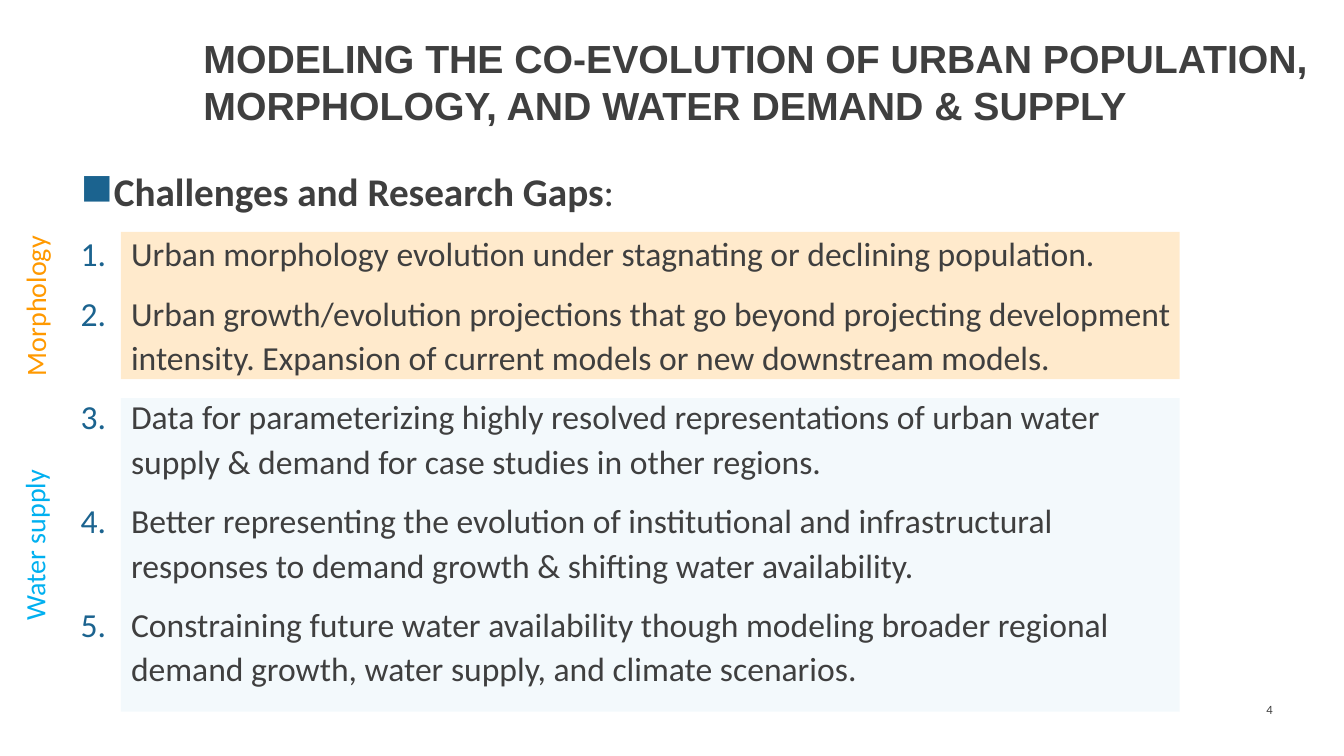
"""Build the slide on challenges in modeling urban population, morphology and water."""
from dataclasses import dataclass

import lxml.etree
import pptx
import pptx.dml.color
import pptx.enum.shapes
import pptx.enum.text
import pptx.oxml.ns
import pptx.util

SLIDE_WIDTH = pptx.util.Inches(13.33)
SLIDE_HEIGHT = pptx.util.Inches(7.5)
COLORS = {
    "text": "3F3F3F",
    "marker": "1B638F",
    "morphology": "FF9900",
    "water band": "C4E2F4",
    "water label": "00B0F0",
}
GAPS = (
    "Urban morphology evolution under stagnating or declining population.",
    "Urban growth/evolution projections that go beyond projecting development intensity. "
    "Expansion of current models or new downstream models.",
    "Data for parameterizing highly resolved representations of urban water supply & demand "
    "for case studies in other regions.",
    "Better representing the evolution of institutional and infrastructural responses to "
    "demand growth & shifting water availability.",
    "Constraining future water availability though modeling broader regional demand growth, "
    "water supply, and climate scenarios.",
)


@dataclass(frozen=True)
class Area:
    """Place on the slide, in percent of its width and height."""

    left: float
    top: float
    width: float
    height: float

    def box(self) -> tuple[int, int, int, int]:
        """Return left, top, width and height in EMU."""
        return (
            round(SLIDE_WIDTH * self.left / 100),
            round(SLIDE_HEIGHT * self.top / 100),
            round(SLIDE_WIDTH * self.width / 100),
            round(SLIDE_HEIGHT * self.height / 100),
        )


@dataclass(frozen=True)
class Theme:
    """A group of gaps: its tinted band and its sideways label."""

    name: str
    band: Area
    band_color: str
    label: Area
    label_color: str


THEMES = (
    Theme("Water supply", Area(9, 52.67, 78.77, 41.47), "water band",
          Area(-3.83, 69.07, 12.83, 5.87), "water label"),
    Theme("Morphology", Area(9, 30.67, 78.77, 19.47), "morphology",
          Area(-3.38, 37.47, 12, 5.87), "morphology"),
)


def rgb(color: str) -> pptx.dml.color.RGBColor:
    """Return the named colour."""
    return pptx.dml.color.RGBColor.from_string(COLORS[color])


def add_xml(parent, tag: str, **attributes: str):
    """Append a DrawingML element and return it."""
    return lxml.etree.SubElement(parent, pptx.oxml.ns.qn(tag), attributes)


def write(paragraph, text: str, *, size: float, color: str = "text",
          font: str = "Calibri", bold: bool = False) -> None:
    """Add a formatted run to a paragraph."""
    run = paragraph.add_run()
    run.text = text
    run.font.size = pptx.util.Pt(size)
    run.font.name = font
    run.font.bold = bold
    run.font.color.rgb = rgb(color)


def add_frame(slide, area: Area, *, rotation: float = 0, middle: bool = False):
    """Add a wrapping text box and return its text frame."""
    holder = slide.shapes.add_textbox(*area.box())
    holder.rotation = rotation
    frame = holder.text_frame
    frame.word_wrap = True
    if middle:
        frame.vertical_anchor = pptx.enum.text.MSO_ANCHOR.MIDDLE
    return frame


def add_band(slide, theme: Theme) -> None:
    """Draw the translucent band behind a theme's gaps."""
    band = slide.shapes.add_shape(pptx.enum.shapes.MSO_SHAPE.RECTANGLE, *theme.band.box())
    band.shadow.inherit = False
    band.line.fill.background()
    band.fill.solid()
    band.fill.fore_color.rgb = rgb(theme.band_color)
    tint = band.fill._xPr.find(".//" + pptx.oxml.ns.qn("a:srgbClr"))
    add_xml(tint, "a:alpha", val="20000")


def set_marker(paragraph, indent: float, tag: str, **attributes: str) -> None:
    """Give a paragraph line spacing, a hanging indent and a coloured marker."""
    paragraph.line_spacing = 1.1
    properties = paragraph._p.get_or_add_pPr()
    hang = pptx.util.Inches(indent)
    properties.set("marL", str(hang))
    properties.set("indent", str(-hang))
    add_xml(add_xml(properties, "a:buClr"), "a:srgbClr", val=COLORS["marker"])
    add_xml(properties, tag, **attributes)


def add_gaps(slide) -> None:
    """Write the heading and the numbered research gaps."""
    frame = add_frame(slide, Area(6, 20.8, 82.82, 75.73))
    frame.margin_left = 0
    heading = frame.paragraphs[0]
    set_marker(heading, 0.33, "a:buChar", char="◼")
    write(heading, "Challenges and Research Gaps", size=28, bold=True)
    write(heading, ":", size=28)
    for gap in GAPS:
        item = frame.add_paragraph()
        item.space_before = pptx.util.Pt(10.8)
        set_marker(item, 0.5, "a:buAutoNum", type="arabicPeriod")
        write(item, gap, size=24)


def main() -> None:
    """Build and save the slide."""
    deck = pptx.Presentation()
    deck.slide_width, deck.slide_height = SLIDE_WIDTH, SLIDE_HEIGHT
    slide = deck.slides.add_slide(deck.slide_layouts[6])
    for theme in THEMES:
        add_band(slide, theme)

    title = add_frame(slide, Area(14.4, 3.47, 85.6, 14.67), middle=True)
    write(title.paragraphs[0],
          "MODELING THE CO-EVOLUTION OF URBAN POPULATION, "
          "MORPHOLOGY, AND WATER DEMAND & SUPPLY",
          size=28, font="Arial", bold=True)

    number = add_frame(slide, Area(86.8, 91.2, 8.63, 5.33), middle=True).paragraphs[0]
    number.alignment = pptx.enum.text.PP_ALIGN.RIGHT
    write(number, "4", size=9)

    add_gaps(slide)
    for theme in reversed(THEMES):
        label = add_frame(slide, theme.label, rotation=270)
        write(label.paragraphs[0], theme.name, size=20, color=theme.label_color)
    deck.save("out.pptx")


if __name__ == "__main__":
    main()
